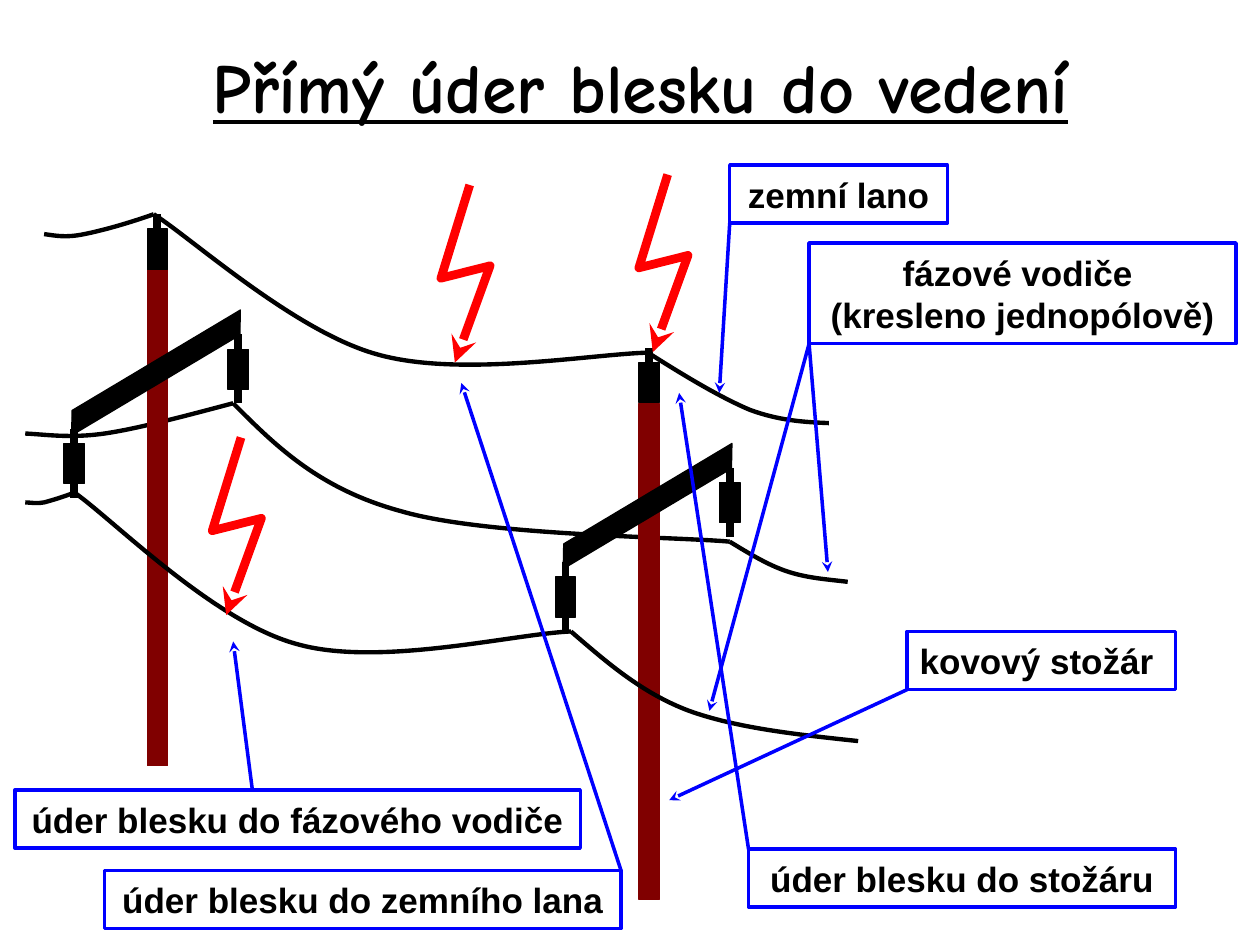
from dataclasses import dataclass

import lxml.etree
import pptx
import pptx.dml.color
import pptx.enum.shapes
import pptx.enum.text
import pptx.oxml.ns
import pptx.util

Cm = pptx.util.Cm
Pt = pptx.util.Pt
RGB = pptx.dml.color.RGBColor
SHAPES = pptx.enum.shapes.MSO_SHAPE
ALIGN = pptx.enum.text.PP_ALIGN
qn = pptx.oxml.ns.qn


@dataclass(frozen=True)
class Theme:
    black: RGB = RGB(0, 0, 0)
    mast: RGB = RGB(0x80, 0, 0)
    bolt: RGB = RGB(0xFF, 0, 0)
    callout: RGB = RGB(0, 0, 0xFF)
    title_font: str = "Comic Neue"
    label_font: str = "Arial"
    title_size: int = 40
    label_size: int = 20


THEME = Theme()

# Wires: a start point, then three points for each Bézier segment (cm)
REAR_WIRES = [
    [(4.19, 3.81), (3.25, 4.06), (2.28, 4.32), (1.6, 4.42), (0.89, 4.52), (0.43, 4.44), (0, 4.42)],
    [(4.19, 3.81), (5.05, 4.67), (5.92, 5.54), (7.59, 5.99), (9.27, 6.48), (13.1, 6.5), (14.2, 6.6)],
]
FRONT_WIRES = [
    [(0.99, 5.61), (1.73, 6.12), (3.78, 8.2), (5.46, 8.66), (7.11, 9.14), (9.83, 8.46), (11, 8.41)],
    [(2.59, 0), (3.35, 0.48), (5.43, 2.36), (7.08, 2.82), (8.74, 3.3), (11.4, 2.82), (12.55, 2.79)],
    [(11, 8.41), (11.71, 9.02), (12.42, 9.65), (13.38, 10.01), (14.35, 10.36), (15.57, 10.49), (16.79, 10.62)],
    [(2.59, 0), (2.08, 0.18), (1.55, 0.33), (1.19, 0.4), (0.81, 0.48), (0.61, 0.43), (0.38, 0.4)],
    [(0.99, 5.61), (0.79, 5.69), (0.56, 5.76), (0.38, 5.81), (0.23, 5.84), (0.1, 5.81), (0, 5.81)],
    [(14.2, 6.6), (14.58, 6.83), (14.98, 7.08), (15.39, 7.21), (15.8, 7.34), (16.18, 7.36), (16.58, 7.41)],
    [(12.6, 2.82), (13.28, 3.25), (13.99, 3.68), (14.6, 3.94), (15.19, 4.16), (15.7, 4.19), (16.2, 4.21)],
]
PYLONS = [(2.46, 0), (12.37, 2.69)]
BOLT = [(0, 0), (-0.58, 1.88), (0.41, 1.63), (-0.3, 3.58)]
BOLT_STARTS = [(9.47, 3.73), (4.86, 8.82), (13.46, 3.52)]

# Callouts: lines of text, box, alignment, arrow start as a share of the box, arrow tips
CALLOUTS = [
    (["zemní lano"], (14.71, 3.33, 4.39, 1.17), ALIGN.CENTER, (0, 1), [(14.5, 7.92)]),
    (["fázové vodiče ", "(kresleno jednopólově)"], (16.31, 4.9, 8.61, 2.03), ALIGN.CENTER,
     (0, 1), [(16.69, 11.53), (14.3, 14.33)]),
    (["kovový stožár"], (18.29, 12.73, 5.41, 1.17), ALIGN.LEFT, (0, 1), [(13.49, 16.13)]),
    (["úder blesku do fázového vodiče"], (0.3, 15.93, 11.4, 1.17), ALIGN.CENTER,
     (0.42, 0), [(4.7, 12.93)]),
    (["úder blesku do zemního lana"], (2.11, 17.55, 10.41, 1.17), ALIGN.CENTER,
     (1, 0), [(9.3, 7.72)]),
    (["úder blesku do stožáru"], (15.09, 17.12, 8.61, 1.17), ALIGN.CENTER,
     (0, 0), [(13.69, 7.92)]),
]


def style_line(shape, color, width, arrow=False):
    shape.line.color.rgb = color
    shape.line.width = Pt(width)
    if arrow:
        line = shape.line._ln
        lxml.etree.SubElement(line, qn("a:round"))
        lxml.etree.SubElement(line, qn("a:tailEnd"), type="stealth")


def add_block(slide, left, top, width, height, color, preset=SHAPES.RECTANGLE):
    shape = slide.shapes.add_shape(preset, Cm(left), Cm(top), Cm(width), Cm(height))
    shape.shadow.inherit = False
    shape.fill.solid()
    shape.fill.fore_color.rgb = color
    style_line(shape, color, 0.75)
    return shape


def add_straight(slide, start, end, color, width, arrow=False):
    connector = slide.shapes.add_connector(
        pptx.enum.shapes.MSO_CONNECTOR.STRAIGHT, *(Cm(value) for value in (*start, *end)))
    style_line(connector, color, width, arrow)
    lxml.etree.SubElement(connector._element.spPr, qn("a:effectLst"))


def add_outline(slide, left, top, points, color, width, arrow=False):
    """Open line through points relative to left, top."""
    placed = [(Cm(left + x), Cm(top + y)) for x, y in points]
    builder = slide.shapes.build_freeform(*placed[0], scale=1.0)
    builder.add_line_segments(placed[1:], close=False)
    shape = builder.convert_to_shape()
    shape.shadow.inherit = False
    shape.fill.background()
    style_line(shape, color, width, arrow)
    return shape


def add_wire(slide, left, top, points):
    wire = add_outline(slide, left, top, points, THEME.black, 2.5)
    # Join every three line steps into one Bézier segment
    steps = list(wire._element.iter(qn("a:lnTo")))
    for index in range(0, len(steps), 3):
        curve = lxml.etree.Element(qn("a:cubicBezTo"))
        steps[index].addprevious(curve)
        for step in steps[index:index + 3]:
            curve.append(step[0])
            step.getparent().remove(step)


def add_insulator(slide, left, top, pin_below):
    add_block(slide, left, top, 0.41, 0.81, THEME.black)
    add_straight(slide, (left + 0.2, top - 0.3), (left + 0.2, top + pin_below), THEME.black, 4.5)


def add_pylon(slide, left, top):
    add_block(slide, left, top + 1.12, 0.41, 10, THEME.mast)
    add_insulator(slide, left + 1.63, top + 2.72, 1.09)
    add_insulator(slide, left - 1.68, top + 4.62, 1.09)
    add_insulator(slide, left, top + 0.3, 0.72)
    # Slanted crossarm
    arm = add_block(slide, left - 1.12, top + 1.52, 2.59, 3.35, THEME.black, SHAPES.PARALLELOGRAM)
    arm.adjustments[0] = 0.806
    arm.rotation = 271.1
    arm._element.spPr.find(qn("a:xfrm")).set("flipV", "1")


def add_power_line(slide, left, top):
    for points in REAR_WIRES:
        add_wire(slide, left, top, points)
    for x, y in PYLONS:
        add_pylon(slide, left + x, top + y)
    for points in FRONT_WIRES:
        add_wire(slide, left, top, points)


def add_text(paragraph, text, font, size, alignment):
    paragraph.alignment = alignment
    run = paragraph.add_run()
    run.text = text
    run.font.name = font
    run.font.size = Pt(size)
    run.font.bold = True
    run.font.color.rgb = THEME.black
    return run


def add_callout(slide, lines, box, alignment, anchor, tips):
    left, top, width, height = box
    label = slide.shapes.add_shape(SHAPES.RECTANGLE, *(Cm(value) for value in box))
    label.shadow.inherit = False
    label.fill.background()
    style_line(label, THEME.callout, 2)
    frame = label.text_frame
    frame.word_wrap = True
    frame.vertical_anchor = pptx.enum.text.MSO_ANCHOR.MIDDLE
    for index, text in enumerate(lines):
        paragraph = frame.add_paragraph() if index else frame.paragraphs[0]
        add_text(paragraph, text, THEME.label_font, THEME.label_size, alignment)
    start = (left + anchor[0] * width, top + anchor[1] * height)
    for tip in tips:
        add_straight(slide, start, tip, THEME.callout, 2, arrow=True)


def add_title(slide, left, top, width, height):
    title = slide.shapes.title
    title.left, title.top, title.width, title.height = Cm(left), Cm(top), Cm(width), Cm(height)
    title.text_frame.vertical_anchor = pptx.enum.text.MSO_ANCHOR.MIDDLE
    run = add_text(title.text_frame.paragraphs[0], "Přímý úder blesku do vedení",
                   THEME.title_font, THEME.title_size, ALIGN.CENTER)
    run.font.underline = True


def main():
    presentation = pptx.Presentation()
    presentation.slide_width, presentation.slide_height = Cm(25.4), Cm(19.05)
    slide = presentation.slides.add_slide(presentation.slide_layouts[5])
    add_title(slide, 1.27, 0.69, 23.29, 2.06)
    add_power_line(slide, 0.51, 4.32)
    for left, top in BOLT_STARTS:
        add_outline(slide, left, top, BOLT, THEME.bolt, 5, arrow=True)
    for callout in CALLOUTS:
        add_callout(slide, *callout)
    presentation.save("out.pptx")


if __name__ == "__main__":
    main()
